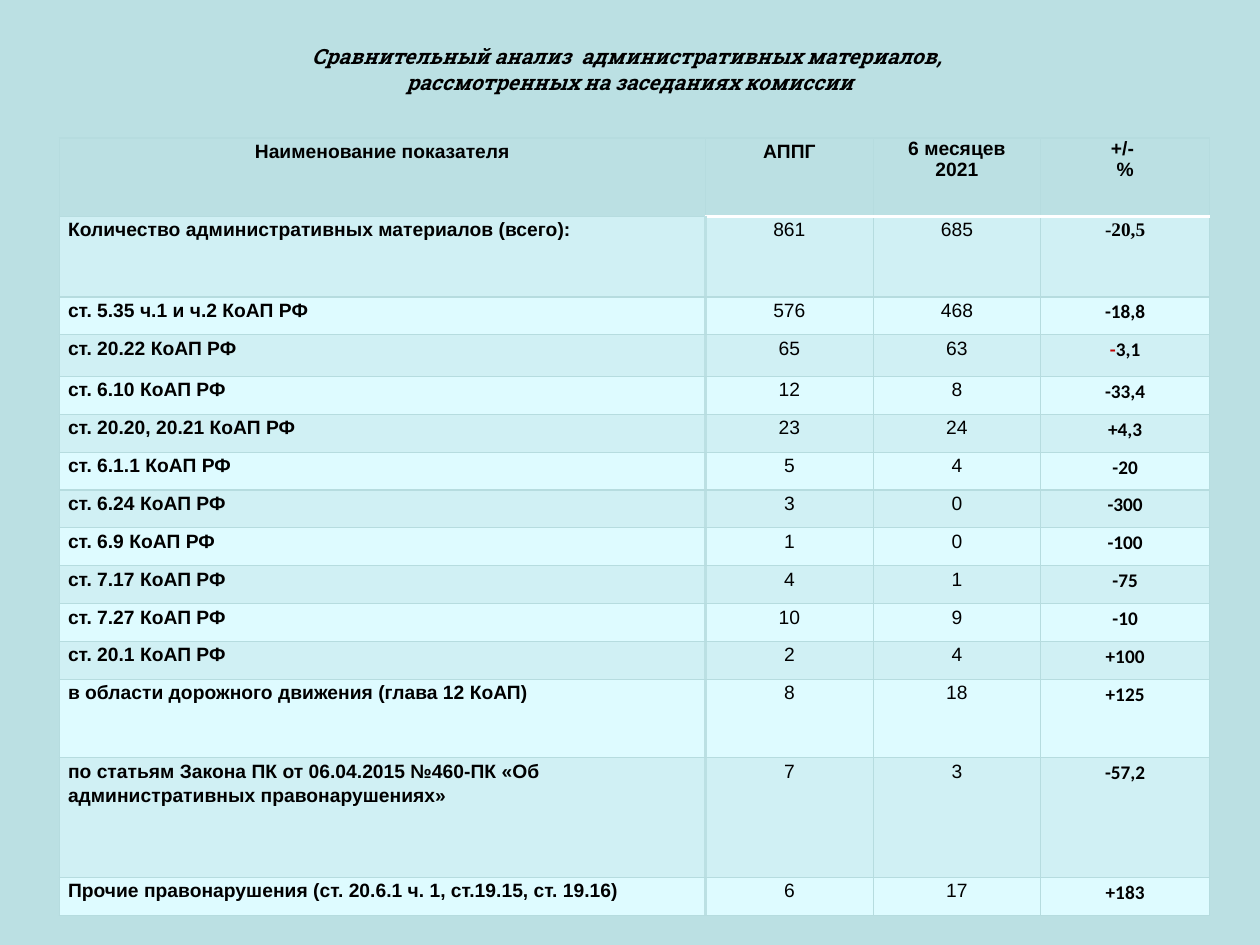
from dataclasses import dataclass

from lxml import etree
from pptx import Presentation
from pptx.dml import color
from pptx.enum import text
from pptx.oxml import ns
from pptx.util import Inches, Pt

ALIGN = text.PP_ALIGN
WIDTH, HEIGHT = Inches(10), Inches(7.5)


@dataclass(frozen=True)
class Theme:
    """Colours, fonts and type sizes of the slide."""
    ground: str = "BBE0E3"
    band: str = "D0F0F4"
    light: str = "DEFBFF"
    grid: str = "B6DCDF"
    rule: str = "FFFFFF"
    ink: str = "000000"
    alert: str = "C00000"
    title_font: str = "Roboto Slab"
    body_font: str = "Arial"
    change_font: str = "Calibri"
    total_font: str = "Times New Roman"
    title_size: int = 12
    body_size: int = 11


THEME = Theme()
TITLE = "Сравнительный анализ  административных материалов, \vрассмотренных на заседаниях комиссии"
HEADINGS = ["Наименование показателя", "АППГ", "6 месяцев\n2021", "+/- \n%"]
INDICATORS = [
    ("Количество административных материалов (всего):", "861", "685", "-20,5"),
    ("ст. 5.35 ч.1 и ч.2 КоАП РФ", "576", "468", "-18,8"),
    ("ст. 20.22 КоАП РФ", "65", "63", "-3,1"),
    ("ст. 6.10 КоАП РФ", "12", "8", "-33,4"),
    ("ст. 20.20, 20.21 КоАП РФ", "23", "24", "+4,3"),
    ("ст. 6.1.1 КоАП РФ", "5", "4", "-20"),
    ("ст. 6.24 КоАП РФ", "3", "0", "-300"),
    ("ст. 6.9 КоАП РФ", "1", "0", "-100"),
    ("ст. 7.17 КоАП РФ", "4", "1", "-75"),
    ("ст. 7.27 КоАП РФ", "10", "9", "-10"),
    ("ст. 20.1 КоАП РФ", "2", "4", "+100"),
    ("в области дорожного движения (глава 12 КоАП)", "8", "18", "+125"),
    ("по статьям Закона ПК от 06.04.2015 №460-ПК «Об административных правонарушениях»",
     "7", "3", "-57,2"),
    ("Прочие правонарушения (ст. 20.6.1 ч. 1, ст.19.15, ст. 19.16)", "6", "17", "+183"),
]
TOTAL_ROW, ALERT_ROW = 1, 3
RAGGED_ROWS = {2, 13}
COLUMN_WIDTHS = [5.13, 1.33, 1.33, 1.34]
ROW_HEIGHTS = [0.62, 0.64, 0.3, 0.33] + [0.3] * 8 + [0.62, 0.95, 0.3]


def apply(target, formats):
    """Set each attribute of the target from a dict of values."""
    for attribute, value in formats.items():
        setattr(target, attribute, value)


def add_run(paragraph, words, ink, **formats):
    """Append words to a paragraph in the given ink and font formats."""
    run = paragraph.add_run()
    run.text = words
    apply(run.font, formats)
    run.font.color.rgb = color.RGBColor.from_string(ink)


def slide_title(slide, box):
    """Place the centred title in a box given as shares of the slide."""
    left, top, width, height = box
    frame = slide.shapes.add_textbox(int(left * WIDTH), int(top * HEIGHT),
                                     int(width * WIDTH), int(height * HEIGHT)).text_frame
    apply(frame, {"word_wrap": True, "vertical_anchor": text.MSO_ANCHOR.TOP})
    paragraph = frame.paragraphs[0]
    paragraph.alignment = ALIGN.CENTER
    for index, line in enumerate(TITLE.split("\v")):
        if index:
            paragraph.add_line_break()
        add_run(paragraph, line, THEME.ink, name=THEME.title_font,
                size=Pt(THEME.title_size), bold=True, italic=True)


def border(cell, side, ink, points):
    """Draw one side of a cell; the side is L, R, T or B."""
    line = etree.SubElement(cell._tc.get_or_add_tcPr(), ns.qn(f"a:ln{side}"), w=str(Pt(points)))
    fill = etree.SubElement(line, ns.qn("a:solidFill"))
    etree.SubElement(fill, ns.qn("a:srgbClr"), val=ink)


def style_cell(cell, row, column):
    """Give a cell its margins, borders and banded fill."""
    apply(cell, {"margin_left": Inches(0.07), "margin_right": Inches(0.07),
                 "margin_top": 0, "margin_bottom": 0})
    edges = dict.fromkeys("LRTB", (THEME.grid, 0.75))
    if row and column < 2:
        edges["L" if column else "R"] = (THEME.ground, 2)
    if column and row < 2:
        edges["T" if row else "B"] = (THEME.rule, 2)
    for side, (ink, points) in edges.items():
        border(cell, side, ink, points)
    fill = THEME.ground if row == 0 else THEME.band if row % 2 else THEME.light
    cell.fill.solid()
    cell.fill.fore_color.rgb = color.RGBColor.from_string(fill)


def fill_cell(cell, words, row, column):
    """Write a cell's paragraphs in the manner of its row and column."""
    is_change = row > 0 and column == 3
    family = THEME.body_font
    if is_change:
        family = THEME.total_font if row == TOTAL_ROW else THEME.change_font
    formats = {"name": family, "size": Pt(THEME.body_size), "bold": row == 0 or column in (0, 3)}
    align = ALIGN.CENTER
    if row and column == 0:
        align = ALIGN.LEFT if row in RAGGED_ROWS else ALIGN.JUSTIFY
    lines = words.split("\n")
    for index, line in enumerate(lines):
        paragraph = cell.text_frame.add_paragraph() if index else cell.text_frame.paragraphs[0]
        paragraph.alignment = align
        if len(lines) == 1:
            apply(paragraph, {"line_spacing": 1.15, "space_after": Pt(10)})
        if is_change and row == ALERT_ROW:
            add_run(paragraph, line[0], THEME.alert, **formats)
            line = line[1:]
        add_run(paragraph, line, THEME.ink, **formats)


def indicator_table(slide, box):
    """Build the comparison table, its grid scaled to the box."""
    left, top, width, height = box
    rows = [HEADINGS, *INDICATORS]
    table = slide.shapes.add_table(len(rows), len(HEADINGS), int(left * WIDTH), int(top * HEIGHT),
                                   int(width * WIDTH), int(height * HEIGHT)).table
    for column, share in zip(table.columns, COLUMN_WIDTHS):
        column.width = int(width * WIDTH * share / sum(COLUMN_WIDTHS))
    for row, share in zip(table.rows, ROW_HEIGHTS):
        row.height = int(height * HEIGHT * share / sum(ROW_HEIGHTS))
    for row, entries in enumerate(rows):
        for column, words in enumerate(entries):
            cell = table.cell(row, column)
            style_cell(cell, row, column)
            fill_cell(cell, words, row, column)


def main():
    """Compose the slide and save it."""
    deck = Presentation()
    apply(deck, {"slide_width": WIDTH, "slide_height": HEIGHT})
    slide = deck.slides.add_slide(deck.slide_layouts[6])
    slide.background.fill.solid()
    slide.background.fill.fore_color.rgb = color.RGBColor.from_string(THEME.ground)
    slide_title(slide, (0.05, 0.04, 0.9, 0.1))
    indicator_table(slide, (0.047, 0.146, 0.913, 0.823))
    deck.save("out.pptx")


if __name__ == "__main__":
    main()
